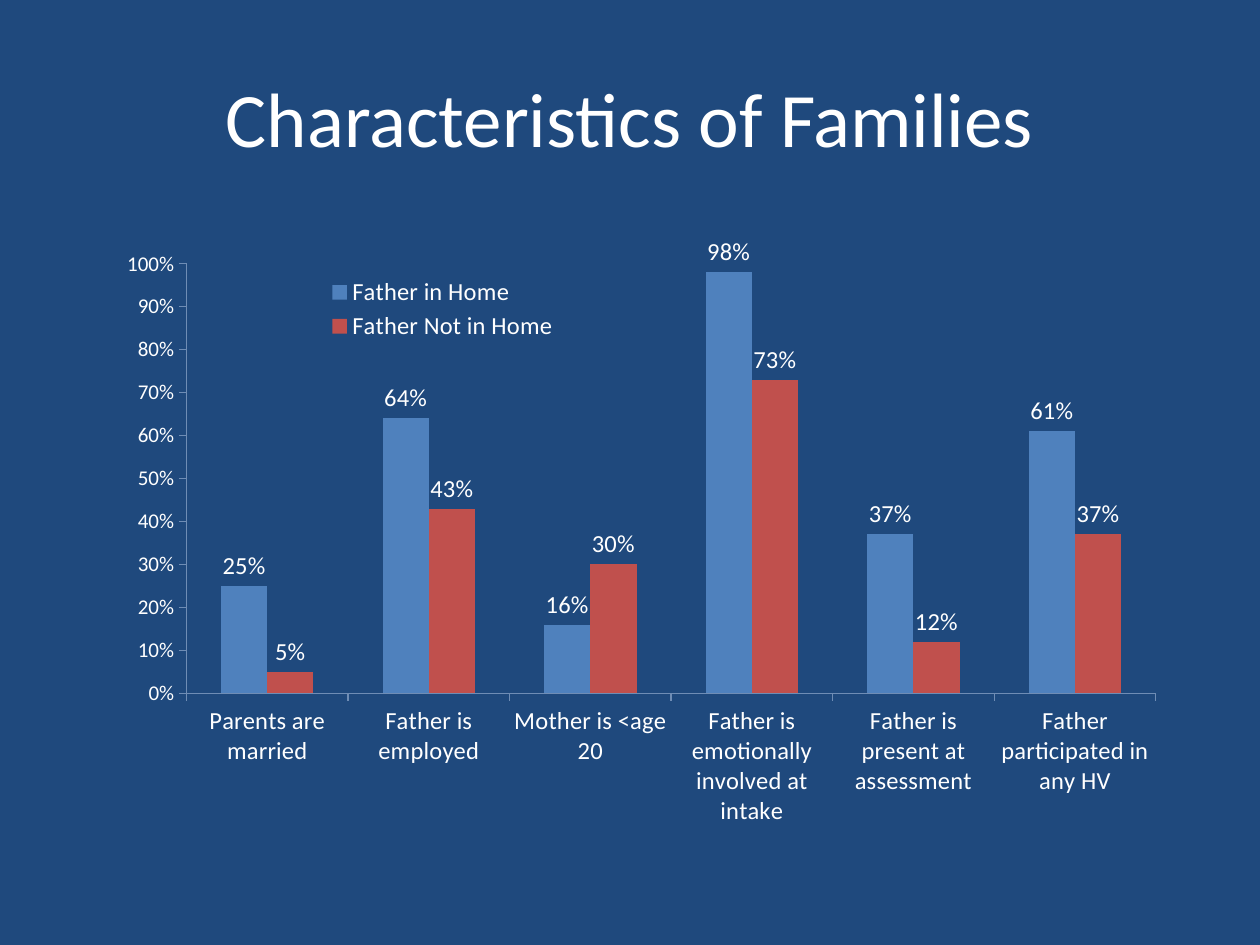
from lxml import etree
from pptx import Presentation
from pptx.chart.data import CategoryChartData
from pptx.dml.color import RGBColor
from pptx.enum.chart import XL_CHART_TYPE, XL_LABEL_POSITION, XL_LEGEND_POSITION, XL_TICK_MARK
from pptx.enum.text import MSO_ANCHOR, PP_ALIGN
from pptx.oxml.ns import qn
from pptx.util import Cm, Pt

NAVY = RGBColor(0x1F, 0x49, 0x7D)
WHITE = RGBColor(0xFF, 0xFF, 0xFF)
BLUE = RGBColor(0x4F, 0x81, 0xBD)
RED = RGBColor(0xC0, 0x50, 0x4D)
AXIS = RGBColor(0x6F, 0x8D, 0xB5)
FONT = "Calibri"

CATEGORIES = [
    "Parents are married",
    "Father is employed",
    "Mother is <age 20",
    "Father is emotionally involved at intake",
    "Father is present at assessment",
    "Father participated in any HV",
]
SERIES = [
    ("Father in Home", [0.25, 0.64, 0.16, 0.98, 0.37, 0.61], BLUE),
    ("Father Not in Home", [0.05, 0.43, 0.30, 0.73, 0.12, 0.37], RED),
]


def style_font(font, size):
    font.name = FONT
    font.size = Pt(size)
    font.color.rgb = WHITE


def set_layout(parent, index, fractions, inner=False):
    """Place a chart part by fractions (x, y, w, h) of the chart box."""
    for old in parent.findall(qn("c:layout")):
        parent.remove(old)
    layout = etree.Element(qn("c:layout"))
    manual = etree.SubElement(layout, qn("c:manualLayout"))
    settings = [("layoutTarget", "inner")] if inner else []
    settings += [("xMode", "edge"), ("yMode", "edge")]
    settings += zip("xywh", fractions)
    for tag, value in settings:
        etree.SubElement(manual, qn(f"c:{tag}")).set("val", str(value))
    parent.insert(index, layout)


def add_title(page, text, left, top, width, height):
    title = page.shapes.title
    title.left, title.top, title.width, title.height = left, top, width, height
    frame = title.text_frame
    frame.text = text
    frame.vertical_anchor = MSO_ANCHOR.MIDDLE
    para = frame.paragraphs[0]
    para.alignment = PP_ALIGN.CENTER
    style_font(para.runs[0].font, 44)


def style_axis(axis, size):
    axis.has_major_gridlines = False
    axis.major_tick_mark = XL_TICK_MARK.OUTSIDE
    axis.minor_tick_mark = XL_TICK_MARK.NONE
    axis.format.line.color.rgb = AXIS
    axis.format.line.width = Pt(0.75)
    style_font(axis.tick_labels.font, size)


def add_family_chart(page, left, top, width, height):
    data = CategoryChartData(number_format="0%")
    data.categories = CATEGORIES
    for name, values, _ in SERIES:
        data.add_series(name, values)
    chart = page.shapes.add_chart(
        XL_CHART_TYPE.COLUMN_CLUSTERED, left, top, width, height, data
    ).chart
    chart.has_title = False
    style_font(chart.font, 10)

    # Axes
    style_axis(chart.category_axis, 14)
    value_axis = chart.value_axis
    style_axis(value_axis, 12)
    value_axis.minimum_scale, value_axis.maximum_scale = 0, 1
    value_axis.major_unit = 0.1
    value_axis.tick_labels.number_format = "0%"
    value_axis.tick_labels.number_format_is_linked = False

    # Columns and their labels
    plot = chart.plots[0]
    plot.gap_width = 150
    plot.overlap = 0
    plot.vary_by_categories = False
    for series, (_, _, color) in zip(plot.series, SERIES):
        series.format.fill.solid()
        series.format.fill.fore_color.rgb = color
        labels = series.data_labels
        labels.show_value = True
        labels.position = XL_LABEL_POSITION.OUTSIDE_END
        labels.number_format = "0%"
        labels.number_format_is_linked = False
        style_font(labels.font, 14)
    plot_area = chart._chartSpace.chart.plotArea
    set_layout(plot_area, 0, (0.076, 0.115, 0.905, 0.66), inner=True)

    # Legend, laid over the plot
    chart.has_legend = True
    legend = chart.legend
    legend.position = XL_LEGEND_POSITION.TOP
    legend.include_in_layout = False
    style_font(legend.font, 14)
    set_layout(legend._element, 1, (0.2, 0.13, 0.23, 0.11))


def main():
    deck = Presentation()
    deck.slide_width, deck.slide_height = Cm(25.4), Cm(19.05)
    page = deck.slides.add_slide(deck.slide_layouts[5])
    page.background.fill.solid()
    page.background.fill.fore_color.rgb = NAVY
    add_title(page, "Characteristics of Families", Cm(1.27), Cm(0.76), Cm(22.86), Cm(3.18))
    add_family_chart(page, Cm(2.12), Cm(3.81), Cm(21.59), Cm(13.12))
    deck.save("out.pptx")


if __name__ == "__main__":
    main()
